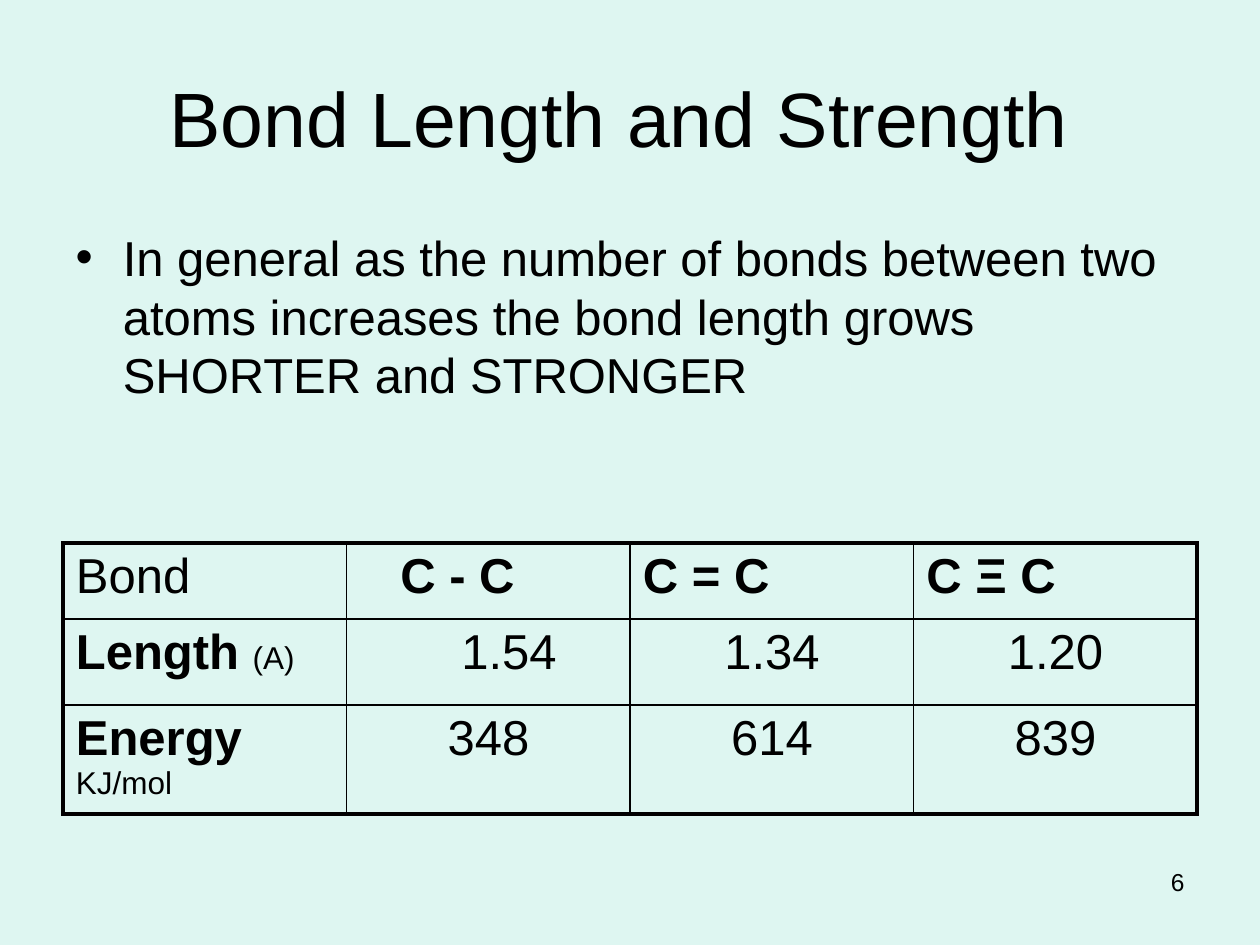
from lxml import etree
from pptx import Presentation
from pptx.dml.color import RGBColor
from pptx.enum.text import MSO_ANCHOR, MSO_AUTO_SIZE, PP_ALIGN
from pptx.oxml.ns import qn
from pptx.util import Emu, Pt

CENTER, LEFT, RIGHT = PP_ALIGN.CENTER, PP_ALIGN.LEFT, PP_ALIGN.RIGHT
MIDDLE, TOP = MSO_ANCHOR.MIDDLE, MSO_ANCHOR.TOP
NO_FIT = MSO_AUTO_SIZE.NONE
SCALE = 914400 / 126  # EMU in one px
INK, PAPER = "000000", "DEF6F1"
THICK, THIN = 2.25, 1
PAD, SHIFT = 13, 41  # cell inset, and extra inset of the single-bond cells

# Each cell holds runs of (text, size, bold)
ROWS = [
    [[("Bond", 28, False)], [("C - C", 28, True)],
     [("C = C", 28, True)], [("C Ξ C", 28, True)]],
    [[("Length ", 28, True), ("(A)", 18, False)], [("1.54", 28, False)],
     [("1.34", 28, False)], [("1.20", 28, False)]],
    [[("Energy ", 28, True), ("KJ/mol", 18, False)], [("348", 28, False)],
     [("614", 28, False)], [("839", 28, False)]],
]
HEIGHTS = [76, 86, 109]
INDENTED = {(0, 1), (1, 1)}


def px(n):
    return Emu(round(n * SCALE))


def color(code):
    return RGBColor.from_string(code)


def style(font, size, bold=False):
    font.name, font.size, font.bold = "Arial", Pt(size), bold
    font.color.rgb = color(INK)


def set_text(shape, box, text, size, align, anchor=TOP):
    """Place a text shape in its box and fill it with one paragraph."""
    shape.left, shape.top, shape.width, shape.height = map(px, box)
    frame = shape.text_frame
    frame.word_wrap, frame.auto_size = True, NO_FIT
    frame.vertical_anchor = anchor
    frame.text = text
    para = frame.paragraphs[0]
    para.alignment = align
    style(para.font, size)


def set_edges(cell, widths):
    """Draw the left, right, top and bottom borders, in that order."""
    props = cell._tc.get_or_add_tcPr()
    for spot, (tag, width) in enumerate(zip(("lnL", "lnR", "lnT", "lnB"), widths)):
        line = etree.Element(qn("a:" + tag), w=str(Pt(width)))
        fill = etree.SubElement(line, qn("a:solidFill"))
        etree.SubElement(fill, qn("a:srgbClr"), val=INK)
        props.insert(spot, line)


def add_bonds(slide, left, top, width):
    """Table of bond lengths and energies."""
    count, cols = len(ROWS), len(ROWS[0])
    table = slide.shapes.add_table(
        count, cols, px(left), px(top), px(width), px(sum(HEIGHTS))).table
    table.first_row = table.horz_banding = False
    for row, height in zip(table.rows, HEIGHTS):
        row.height = px(height)
    for r, row in enumerate(ROWS):
        for c, runs in enumerate(row):
            cell = table.cell(r, c)
            cell.fill.background()
            cell.margin_left = px(PAD + SHIFT * ((r, c) in INDENTED))
            para = cell.text_frame.paragraphs[0]
            para.alignment = CENTER if r and c else LEFT
            for text, size, bold in runs:
                run = para.add_run()
                run.text = text
                style(run.font, size, bold)
            outer = (c == 0, c == cols - 1, r == 0, r == count - 1)
            set_edges(cell, [THICK if edge else THIN for edge in outer])


def main():
    deck = Presentation()
    deck.slide_width, deck.slide_height = px(1260), px(945)
    slide = deck.slides.add_slide(deck.slide_layouts[1])
    slide.background.fill.solid()
    slide.background.fill.fore_color.rgb = color(PAPER)

    # Title and bullet
    title, body = slide.placeholders
    set_text(title, (63, 38, 1134, 157), "Bond Length and Strength ",
             44, CENTER, MIDDLE)
    set_text(body, (63, 221, 1134, 301),
             "In general as the number of bonds between two atoms increases "
             "the bond length grows SHORTER and STRONGER", 28, LEFT)

    add_bonds(slide, 63, 543, 1134)

    # Slide number
    number = slide.shapes.add_textbox(0, 0, 0, 0)
    set_text(number, (903, 861, 294, 66), "6", 14, RIGHT)
    deck.save("out.pptx")


if __name__ == "__main__":
    main()
